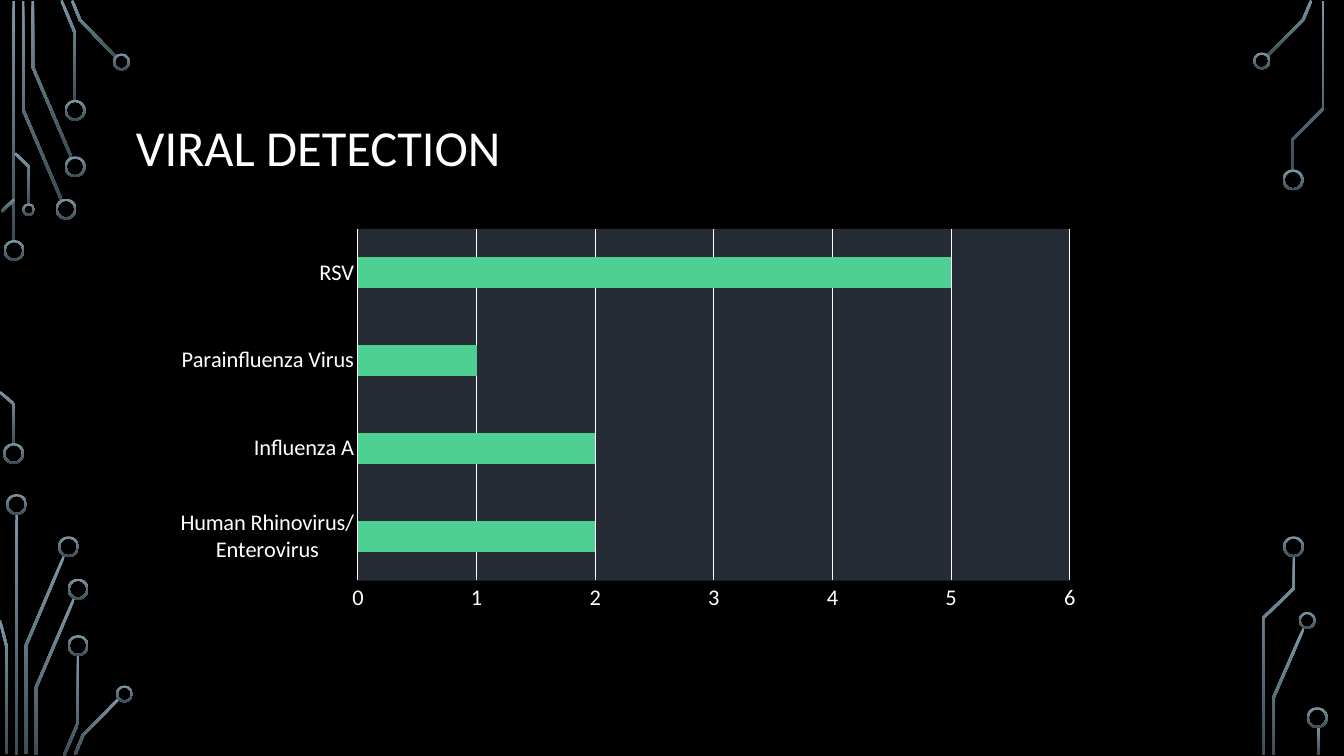
from lxml import etree
from pptx import Presentation
from pptx.chart.data import CategoryChartData
from pptx.dml.color import RGBColor
from pptx.enum.chart import XL_CHART_TYPE as ChartType, XL_TICK_MARK as Tick
from pptx.enum.shapes import MSO_SHAPE as Shape
from pptx.enum.text import MSO_ANCHOR as Anchor
from pptx.oxml import parse_xml
from pptx.oxml.ns import nsdecls, qn
from pptx.util import Inches, Pt

BLACK = RGBColor(0x00, 0x00, 0x00)
WHITE = RGBColor(0xFF, 0xFF, 0xFF)
TRACE_LIGHT = RGBColor(0x7C, 0x96, 0xA3)
TRACE_DARK = RGBColor(0x3B, 0x4C, 0x54)
PLOT = RGBColor(0x25, 0x2C, 0x36)
BAR = RGBColor(0x4F, 0xD0, 0x93)

# Grid: one column or row is a tenth of an inch.
TRACE_WIDTH = 0.26
TRACES = [
    # top left
    [(1.35, 0.1), (1.35, 24)],
    [(2.3, 0.1), (2.3, 10.9), (6.1, 19.85)],
    [(3.25, 0.1), (3.25, 6.65), (7.1, 15.65)],
    [(6.1, 0.05), (7.45, 3.3), (7.45, 10)],
    [(7.15, 0.05), (7.95, 2), (11.55, 5.7)],
    [(0.15, 21), (1.4, 19.8)],
    [(1.5, 15.2), (2.9, 16.55), (2.9, 20.3)],
    # bottom left
    [(0, 38.9), (1.4, 40.1), (1.4, 44.1)],
    [(1.65, 51), (1.65, 74.9)],
    [(2.55, 74.8), (2.55, 64.1), (6.35, 55.15)],
    [(0, 61.55), (0.65, 64.1), (0.65, 74.8)],
    [(3.55, 74.9), (3.55, 68.25), (7.35, 59.35)],
    [(6.35, 74.95), (7.75, 71.7), (7.75, 65)],
    [(7.45, 74.85), (8.25, 72.9), (11.8, 69.3)],
    # top right
    [(125.7, 5.55), (129.25, 1.95), (130.05, 0.05)],
    [(128.2, 16.9), (128.2, 13.85), (131.25, 10.75), (131.25, 0.1)],
    # bottom right
    [(126.25, 74.9), (126.25, 69.35), (129.3, 62.35)],
    [(125.25, 74.9), (125.25, 61.35), (128.35, 58.35), (128.35, 55.2)],
    [(130.75, 72.1), (130.75, 74.9)],
]
# Ring centres by diameter
RINGS = {
    2.08: [(1.4, 24.85), (1.35, 45), (6.55, 20.75), (7.45, 16.55),
           (7.45, 10.95), (1.65, 50.05), (6.8, 54.25), (7.75, 58.45),
           (7.75, 64.05), (128.25, 17.85), (128.3, 54.25), (130.65, 71.2)],
    1.7: [(12.05, 6.15), (12.35, 68.85), (125.15, 6.05), (129.65, 61.55)],
    1.25: [(2.85, 20.8)],
}


class Deck:
    font = "Calibri"
    unit = Inches(0.1)

    def __init__(self):
        self.prs = Presentation()
        self.prs.slide_width, self.prs.slide_height = Inches(13.33), Inches(7.5)
        self.s = self.prs.slides.add_slide(self.prs.slide_layouts[6])
        fill = self.s.background.fill
        fill.solid()
        fill.fore_color.rgb = BLACK

    def grid(self, *cells):
        return [round(cell * self.unit) for cell in cells]

    def paint_trace(self, sp):
        sp.shadow.inherit = False
        sp.line.fill.background()
        sp.fill.gradient()
        sp.fill.gradient_angle = 270
        for stop, color in zip(sp.fill.gradient_stops, (TRACE_LIGHT, TRACE_DARK)):
            stop.color.rgb = color

    def trace(self, points):
        """Draw a circuit line as a mitred band around its centre points."""
        pts = [complex(*point) for point in points]
        normals = [1j * (b - a) / abs(b - a) for a, b in zip(pts, pts[1:])]
        sides = []
        for pt, n1, n2 in zip(pts, normals[:1] + normals, normals + normals[-1:]):
            dot = (n1 * n2.conjugate()).real
            mitre = (n1 + n2) / (1 + dot) * TRACE_WIDTH / 2
            sides.append((pt + mitre, pt - mitre))
        outline = [a for a, _ in sides] + [b for _, b in reversed(sides)]
        corners = [self.grid(c.real, c.imag) for c in outline]
        builder = self.s.shapes.build_freeform(*corners[0])
        builder.add_line_segments(corners[1:], close=True)
        self.paint_trace(builder.convert_to_shape())

    def ring(self, x, y, size):
        box = self.grid(x - size / 2, y - size / 2, size, size)
        sp = self.s.shapes.add_shape(Shape.DONUT, *box)
        sp.adjustments[0] = 0.2 / size
        self.paint_trace(sp)

    def style_font(self, font, size):
        font.name, font.size, font.color.rgb = self.font, Pt(size), WHITE

    def title(self, text, *box):
        tf = self.s.shapes.add_textbox(*self.grid(*box)).text_frame
        tf.word_wrap = True
        tf.vertical_anchor = Anchor.MIDDLE
        tf.text = text
        p = tf.paragraphs[0]
        p.line_spacing = 0.9
        self.style_font(p.runs[0].font, 36)

    def bar_chart(self, values, *box):
        data = CategoryChartData()
        data.categories = list(values)
        data.add_series("Series 1", list(values.values()))
        chart = self.s.shapes.add_chart(
            ChartType.BAR_CLUSTERED, *self.grid(*box), data).chart
        chart.has_legend = chart.has_title = False
        self.style_font(chart.font, 10)

        plot = chart.plots[0]
        plot.gap_width = 182
        plot.vary_by_categories = False
        fill = plot.series[0].format.fill
        fill.solid()
        fill.fore_color.rgb = BAR

        cat, val = chart.category_axis, chart.value_axis
        for axis in (cat, val):
            axis.major_tick_mark = axis.minor_tick_mark = Tick.NONE
            self.style_font(axis.tick_labels.font, 16)
        val.minimum_scale, val.maximum_scale, val.major_unit = 0, 6, 1
        val.has_major_gridlines = True
        val.format.line.fill.background()
        for line in (cat.format.line, val.major_gridlines.format.line):
            line.color.rgb, line.width = WHITE, Pt(0.75)
        self.style_plot_area(chart)

    def style_plot_area(self, chart):
        """Fix the inner plot rectangle, fill it and clear the chart area."""
        root = chart.element.find(qn("c:chart"))
        area = root.find(qn("c:plotArea"))
        for old in area.findall(qn("c:layout")):
            area.remove(old)
        layout = parse_xml(f"<c:layout {nsdecls('c')}><c:manualLayout/></c:layout>")
        settings = dict(layoutTarget="inner", xMode="edge", yMode="edge",
                        x=0.21, y=0.03, w=0.66, h=0.84)
        settings.update(zip("xywh", (2.3 / 10.83, 0.11 / 4.17,
                                     7.06 / 10.83, 3.49 / 4.17)))
        for tag, value in settings.items():
            etree.SubElement(layout[0], qn(f"c:{tag}")).set("val", str(value))
        area.insert(0, layout)
        ns = nsdecls("c", "a")
        area.append(parse_xml(
            f'<c:spPr {ns}><a:solidFill><a:srgbClr val="{PLOT}"/>'
            "</a:solidFill></c:spPr>"))
        root.addnext(parse_xml(
            f"<c:spPr {ns}><a:noFill/><a:ln><a:noFill/></a:ln></c:spPr>"))


def main():
    deck = Deck()
    for points in TRACES:
        deck.trace(points)
    for size, centres in RINGS.items():
        for x, y in centres:
            deck.ring(x, y, size)
    deck.title("VIRAL DETECTION", 12.5, 6.8, 108.3, 16.2)
    deck.bar_chart({"Human Rhinovirus/ Enterovirus": 2, "Influenza A": 2,
                    "Parainfluenza Virus": 1, "RSV": 5},
                   12.5, 21.6, 108.3, 41.7)
    deck.prs.save("out.pptx")


if __name__ == "__main__":
    main()
